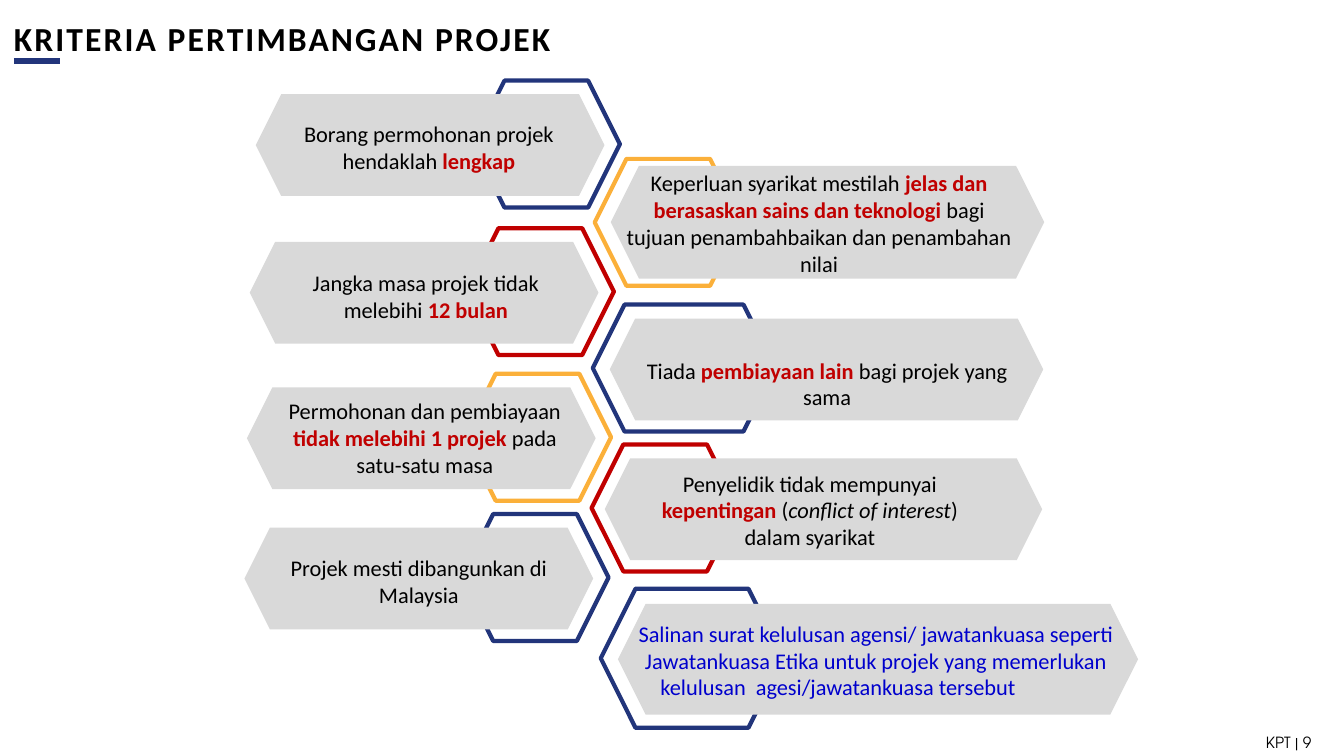
from dataclasses import dataclass

from lxml.etree import SubElement
from pptx import Presentation
from pptx.dml.color import RGBColor as RGB
from pptx.enum.shapes import MSO_CONNECTOR as CONNECTOR, MSO_SHAPE as SHAPE
from pptx.enum.text import MSO_ANCHOR as ANCHOR, MSO_AUTO_SIZE as FIT, PP_ALIGN as ALIGN
from pptx.oxml.ns import qn
from pptx.util import Pt


@dataclass(frozen=True)
class Theme:
    navy: str = "22357B"
    red: str = "C00000"
    amber: str = "FBB03A"
    grey: str = "D9D9D9"
    black: str = "000000"
    blue: str = "0000CC"
    font: str = "Calibri"
    footer_font: str = "TeX Gyre Adventor"
    title_size: float = 24
    body_size: float = 16
    footer_size: float = 11
    title_spacing: float = 1.5


class Deck:
    def __init__(self, theme):
        self.theme = theme
        self.presentation = Presentation()
        self.presentation.slide_width = Pt(960)
        self.presentation.slide_height = Pt(540)
        self.slide = self.presentation.slides.add_slide(self.presentation.slide_layouts[6])
        self.shapes = self.slide.shapes

    def hexagon(self, shapes, box, fill=None, outline=None):
        hexagon = shapes.add_shape(SHAPE.HEXAGON, *map(Pt, box))
        hexagon.shadow.inherit = False
        if fill:
            hexagon.fill.solid()
            hexagon.fill.fore_color.rgb = RGB.from_string(fill)
        else:
            hexagon.fill.background()
        if outline:
            hexagon.line.color.rgb = RGB.from_string(outline)
            hexagon.line.width = Pt(3)
        else:
            hexagon.line.fill.background()

    def rule(self, start, end, color, width):
        rule = self.shapes.add_connector(CONNECTOR.STRAIGHT, *map(Pt, start + end))
        rule.line.color.rgb = RGB.from_string(color)
        rule.line.width = Pt(width)
        SubElement(rule.element.spPr, qn("a:effectLst"))

    def frame(self, shapes, box, anchor=ANCHOR.TOP):
        frame = shapes.add_textbox(*map(Pt, box)).text_frame
        frame.word_wrap = True
        frame.vertical_anchor = anchor
        return frame

    def run(self, paragraph, text, size, color, bold=False, italic=False, font=None):
        run = paragraph.add_run()
        run.text = text
        run.font.name = font or self.theme.font
        run.font.size = Pt(size)
        run.font.color.rgb = RGB.from_string(color)
        run.font.bold = bold
        run.font.italic = italic
        return run

    def title(self, text, box):
        frame = self.frame(self.shapes, box, ANCHOR.MIDDLE)
        frame.margin_left = frame.margin_right = 0
        heading = self.run(frame.paragraphs[0], text, self.theme.title_size,
                           self.theme.black, bold=True)
        heading.font.element.set("spc", str(int(self.theme.title_spacing * 100))) \
            if hasattr(heading.font, "element") else \
            heading._r.get_or_add_rPr().set("spc", str(int(self.theme.title_spacing * 100)))

    def footer(self, text, box):
        paragraph = self.frame(self.shapes, box, ANCHOR.MIDDLE).paragraphs[0]
        paragraph.alignment = ALIGN.RIGHT
        self.run(paragraph, text, self.theme.footer_size, self.theme.black,
                 font=self.theme.footer_font)

    def criterion(self, accent, ring, plate, label, paragraphs):
        shapes = self.shapes.add_group_shape().shapes
        self.hexagon(shapes, ring, outline=accent)
        self.hexagon(shapes, plate, fill=self.theme.grey)
        frame = self.frame(shapes, label)
        frame.auto_size = FIT.SHAPE_TO_FIT_TEXT
        for index, (right_indent, runs) in enumerate(paragraphs):
            paragraph = frame.add_paragraph() if index else frame.paragraphs[0]
            paragraph.alignment = ALIGN.CENTER
            if right_indent:
                paragraph._p.get_or_add_pPr().set("marR", str(Pt(right_indent)))
            for text, style in runs:
                self.run(paragraph, text, self.theme.body_size, **style)


def main():
    theme = Theme()
    deck = Deck(theme)
    plain = {"color": theme.black}
    strong = {"color": theme.red, "bold": True}
    italic = {"color": theme.black, "italic": True}
    note = {"color": theme.blue}

    deck.title("KRITERIA PERTIMBANGAN PROJEK", (10, 10.8, 451.4, 33.1))
    deck.rule((10, 43.4), (43.2, 43.4), theme.navy, 4.5)
    deck.footer("KPT | 9", (715.7, 519.8, 228.2, 21.6))

    left_criteria = [
        (theme.navy, 337.7, 57.6, (203.8, 82.1, 205.2, 46.1),
         [("Borang permohonan projek hendaklah ", plain), ("lengkap", strong)]),
        (theme.red, 333.4, 163, (187.9, 188.6, 232.6, 46.1),
         [("Jangka masa projek tidak melebihi", plain), (" 12 bulan", strong)]),
        (theme.amber, 331.4, 267, (187.2, 280.1, 232.6, 65.5),
         [("Permohonan dan pembiayaan ", plain), ("tidak melebihi 1 projek ", strong),
          ("pada satu-satu masa", plain)]),
        (theme.navy, 329.6, 367.2, (182.9, 392.4, 232.6, 46.1),
         [("Projek mesti dibangunkan di Malaysia", plain)]),
    ]
    for accent, left, top, label, runs in left_criteria:
        deck.criterion(accent, (left, top, 105.1, 90.7),
                       (left - 155, top + 9.7, 249.1, 72.7), label, [(0, runs)])

    right_criteria = [
        (theme.amber, (424.8, 113.5, 105.1, 90.7), (436.3, 118.4, 309.6, 80.6),
         (437.8, 117.4, 294.5, 85),
         [(0, [("Keperluan syarikat mestilah ", plain),
               ("jelas dan berasaskan sains dan teknologi ", strong),
               ("bagi tujuan penambahbaikan dan penambahan nilai", plain)])]),
        (theme.navy, (423.4, 217.6, 130.3, 90.7), (435.6, 227.5, 309.6, 72.7),
         (446.4, 251.3, 288.7, 46.1),
         [(0, [("Tiada ", plain), ("pembiayaan lain ", strong),
               ("bagi projek yang sama", plain)])]),
        (theme.red, (422.6, 317.5, 105.1, 90.7), (432, 327.4, 312.5, 72.7),
         (453.6, 331.9, 249.8, 65.5),
         [(0, [("Penyelidik tidak mempunyai ", plain), ("kepentingan", strong),
               (" (", plain), ("conflict of interest", italic),
               (") dalam syarikat", plain)])]),
        (theme.navy, (429.1, 420.5, 130.3, 99.4), (441.4, 431.3, 371.5, 79.2),
         (442.1, 439.2, 367.2, 65.5),
         [(0, [("Salinan surat kelulusan agensi/ jawatankuasa seperti "
                "Jawatankuasa Etika untuk projek yang memerlukan", note)]),
          (54, [("kelulusan  agesi/jawatankuasa tersebut", note)])]),
    ]
    for criterion in right_criteria:
        deck.criterion(*criterion)

    deck.presentation.save("out.pptx")


if __name__ == "__main__":
    main()
